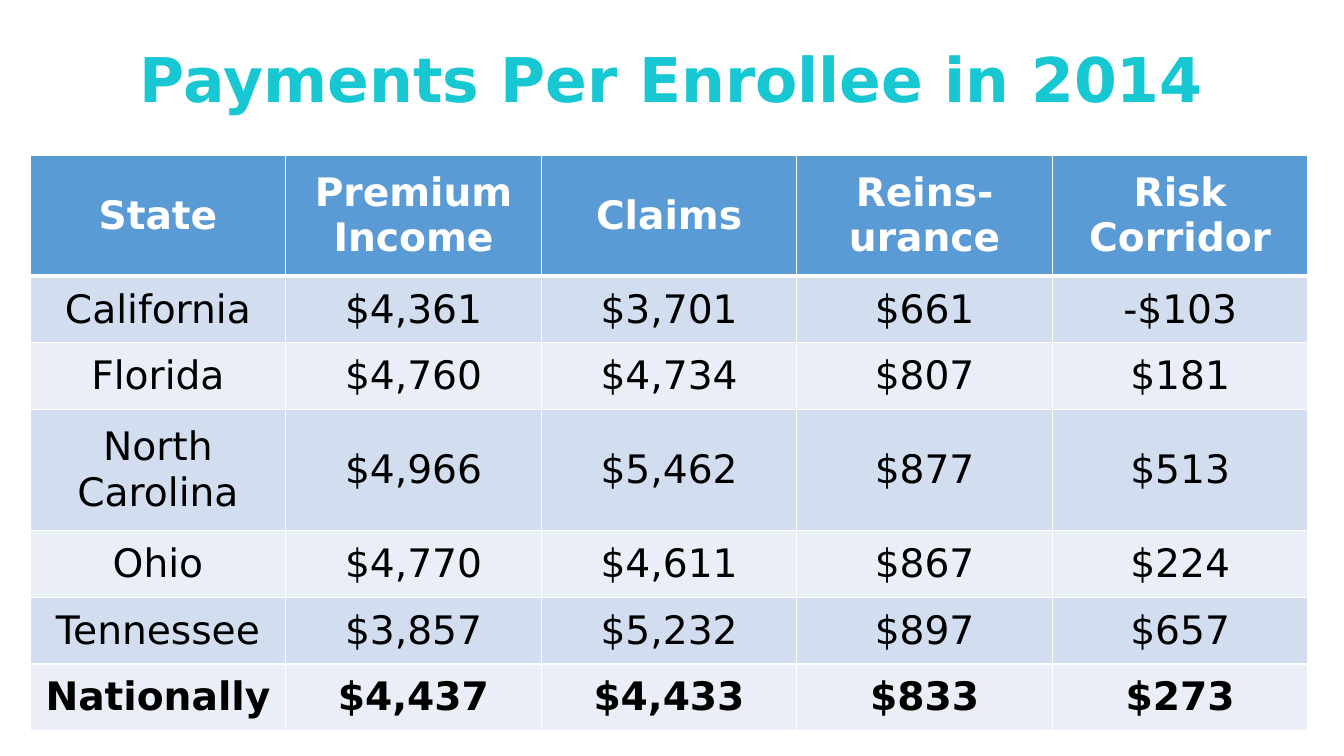
from dataclasses import dataclass

from lxml import etree
from pptx import Presentation, util as u
from pptx.dml import color
from pptx.enum import text
from pptx.oxml import ns

COLOURS = {
    "title": "17C7D2",
    "header": "5B9BD5",
    "odd": "D2DEEF",
    "even": "EAEFF7",
    "light": "FFFFFF",
    "dark": "000000",
}
FONT = "DejaVu Sans"
COLUMN_WIDTH = u.Cm(6.44)
THIN, THICK = u.Pt(1), u.Pt(3)


@dataclass
class Row:
    cells: tuple[str, ...]
    fill: str
    ink: str = "dark"
    bold: bool = False
    height: float = 1.68
    top: int = THIN
    bottom: int = THIN


ROWS = [
    Row(("State", "Premium Income", "Claims", "Reins-urance", "Risk Corridor"),
        "header", ink="light", bold=True, height=3.05, bottom=THICK),
    Row(("California", "$4,361", "$3,701", "$661", "-$103"), "odd", top=THICK),
    Row(("Florida", "$4,760", "$4,734", "$807", "$181"), "even"),
    Row(("North Carolina", "$4,966", "$5,462", "$877", "$513"), "odd", height=3.05),
    Row(("Ohio", "$4,770", "$4,611", "$867", "$224"), "even"),
    Row(("Tennessee", "$3,857", "$5,232", "$897", "$657"), "odd"),
    Row(("Nationally", "$4,437", "$4,433", "$833", "$273"), "even", bold=True),
]


def rgb(name: str) -> color.RGBColor:
    return color.RGBColor.from_string(COLOURS[name])


def write(frame, words: str, size: int, ink: str, bold: bool) -> None:
    """Fill a text frame with one centred paragraph."""
    frame.text = words
    para = frame.paragraphs[0]
    para.alignment = text.PP_ALIGN.CENTER
    font = para.runs[0].font
    font.name, font.size, font.bold = FONT, u.Pt(size), bold
    font.color.rgb = rgb(ink)


def add_borders(cell, top: int, bottom: int) -> None:
    """Draw white lines on the four sides of a cell."""
    properties = cell._tc.get_or_add_tcPr()
    for side, width in (("L", THIN), ("R", THIN), ("T", top), ("B", bottom)):
        line = etree.SubElement(properties, ns.qn(f"a:ln{side}"), w=str(width))
        fill = etree.SubElement(line, ns.qn("a:solidFill"))
        etree.SubElement(fill, ns.qn("a:srgbClr"), val=COLOURS["light"])


def add_title(page) -> None:
    title = page.shapes.title
    title.left, title.top = u.Cm(2.33), u.Cm(0.24)
    title.width, title.height = u.Cm(29.21), u.Cm(3.68)
    title.text_frame.vertical_anchor = text.MSO_ANCHOR.MIDDLE
    write(title.text_frame, "Payments Per Enrollee in 2014", 44, "title", True)
    title.text_frame.paragraphs[0].line_spacing = 0.9


def add_payments(page) -> None:
    columns = len(ROWS[0].cells)
    height = u.Cm(sum(row.height for row in ROWS))
    table = page.shapes.add_table(len(ROWS), columns, u.Cm(0.76), u.Cm(3.91),
                                  COLUMN_WIDTH * columns, height).table
    for column in table.columns:
        column.width = COLUMN_WIDTH
    for table_row, row in zip(table.rows, ROWS):
        table_row.height = u.Cm(row.height)
        for cell, words in zip(table_row.cells, row.cells):
            write(cell.text_frame, words, 28, row.ink, row.bold)
            cell.vertical_anchor = text.MSO_ANCHOR.MIDDLE
            add_borders(cell, row.top, row.bottom)
            cell.fill.solid()
            cell.fill.fore_color.rgb = rgb(row.fill)


def main() -> None:
    deck = Presentation()
    deck.slide_width, deck.slide_height = u.Cm(33.87), u.Cm(19.05)
    page = deck.slides.add_slide(deck.slide_layouts[5])  # title only
    add_title(page)
    add_payments(page)
    deck.save("out.pptx")


if __name__ == "__main__":
    main()
